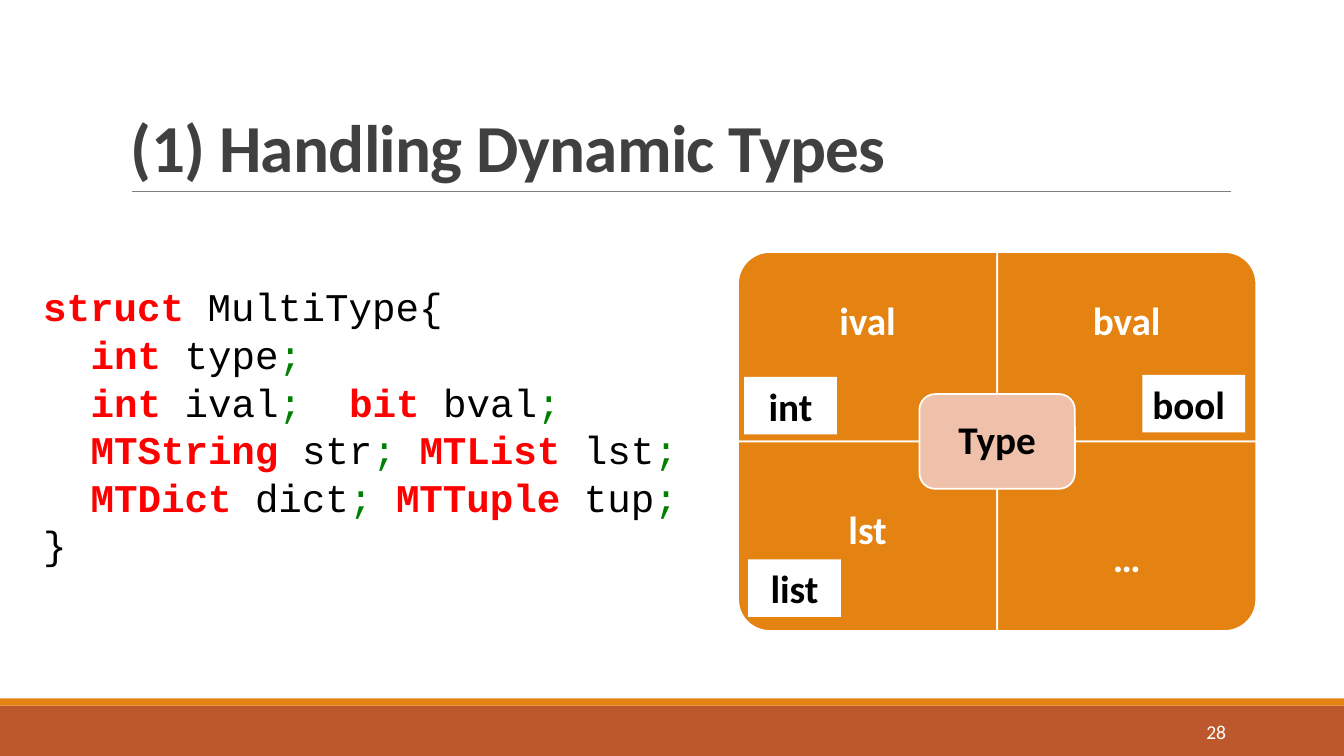
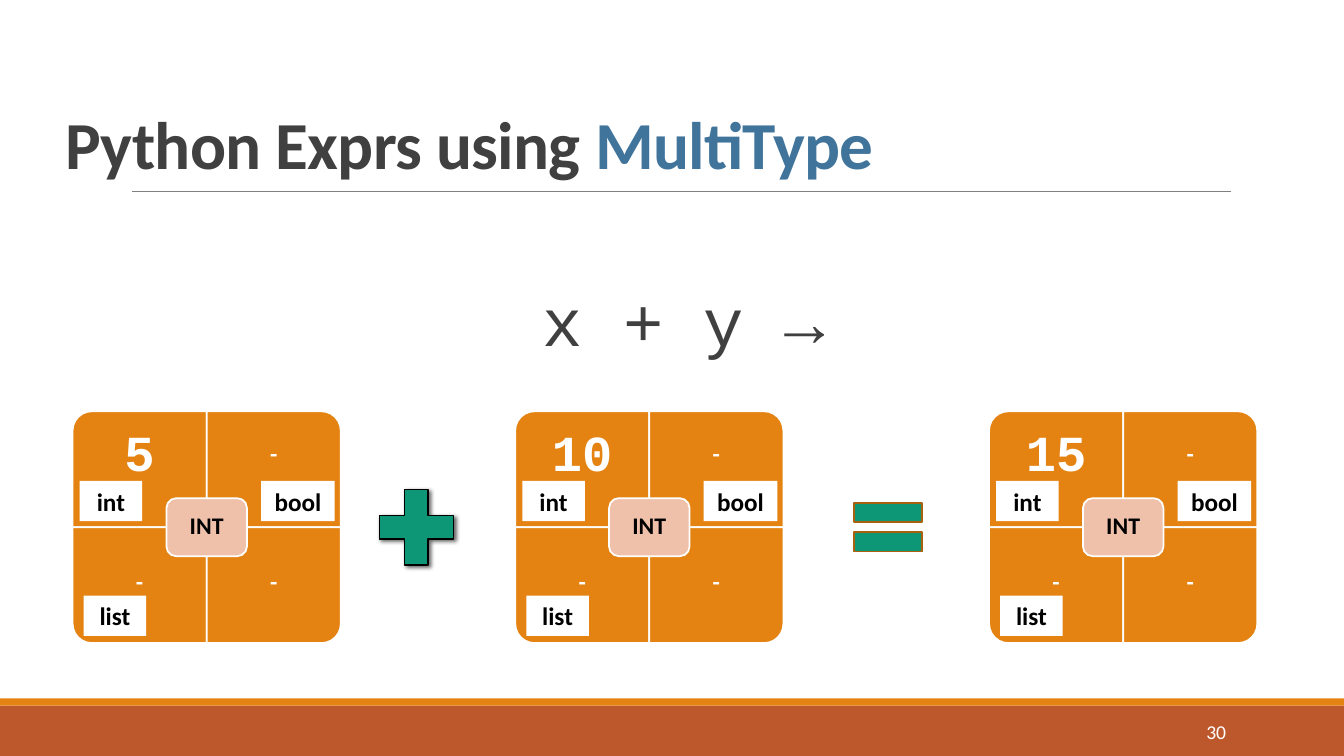
from lxml import etree
from pptx import Presentation
from pptx.dml.color import RGBColor
from pptx.enum.shapes import MSO_CONNECTOR, MSO_SHAPE
from pptx.enum.text import MSO_ANCHOR, PP_ALIGN
from pptx.oxml import parse_xml
from pptx.oxml.ns import nsdecls, qn
from pptx.util import Inches, Pt

RECT, ROUND = MSO_SHAPE.RECTANGLE, MSO_SHAPE.ROUNDED_RECTANGLE
CORNER = MSO_SHAPE.ROUND_1_RECTANGLE
PLUS, EQUAL = MSO_SHAPE.MATH_PLUS, MSO_SHAPE.MATH_EQUAL
LEFT, MID, RIGHT = PP_ALIGN.LEFT, PP_ALIGN.CENTER, PP_ALIGN.RIGHT
TOP, CENTER, BOTTOM = MSO_ANCHOR.TOP, MSO_ANCHOR.MIDDLE, MSO_ANCHOR.BOTTOM

RUST, ORANGE, PEACH, TEAL = "BD582C", "E48312", "EFC1AB", "0D9776"
WHITE, BLACK, GRAY, DARK, BLUE = "FFFFFF", "000000", "808080", "404040", "40749B"
RED, GREEN, BROWN = "FF0000", "008000", "A9610D"
SANS, MONO = "Calibri", "Courier New"


def draw(shapes, kind, x, y, w, h, fill, line=None, width=1.25):
    """Add a preset shape with a plain fill and an optional outline."""
    item = shapes.add_shape(kind, Inches(x), Inches(y), Inches(w), Inches(h))
    item.shadow.inherit = False
    item.fill.solid()
    item.fill.fore_color.rgb = RGBColor.from_string(fill)
    if line:
        item.line.color.rgb = RGBColor.from_string(line)
        item.line.width = Pt(width)
    else:
        item.line.fill.background()
    return item


def write(shapes, x, y, w, h, rows, size=28, font=SANS, color=BLACK, bold=False,
          align=MID, anchor=CENTER, pad=0.0, space=None, tight=0, item=None):
    """Write rows of (text, color, bold) runs in a new text box or in item."""
    item = item or shapes.add_textbox(Inches(x), Inches(y), Inches(w), Inches(h))
    frame = item.text_frame
    frame.word_wrap = True
    frame.vertical_anchor = anchor
    frame.margin_left = frame.margin_right = Inches(pad)
    frame.margin_top = frame.margin_bottom = Inches(pad / 2)
    if isinstance(rows, str):
        rows = [[(rows, color, bold)]]
    for i, row in enumerate(rows):
        para = frame.add_paragraph() if i else frame.paragraphs[0]
        para.alignment = align
        if space:
            para.line_spacing = space
        for text, tint, heavy in row:
            run = para.add_run()
            run.text = text
            run.font.size, run.font.name, run.font.bold = Pt(size), font, heavy
            run.font.color.rgb = RGBColor.from_string(tint)
            if tight:
                run.font._element.set("spc", str(tight))
    return item


deck = Presentation()
deck.slide_width, deck.slide_height = Inches(13.33), Inches(7.5)

# Shared frame: bands, title rule, title, page number
pages = [
    (1.2, 0.31, 11, [("(1) Handling Dynamic Types", DARK, True)], "28"),
    (0.55, 0.28, 12.39, [("Python Exprs using ", DARK, True),
                         ("MultiType", BLUE, True)], "30"),
]
slides = []
for x, y, w, title, num in pages:
    shapes = deck.slides.add_slide(deck.slide_layouts[6]).shapes
    slides.append(shapes)
    draw(shapes, RECT, 0, 7, 13.33, 0.5, RUST)
    draw(shapes, RECT, 0, 6.93, 13.33, 0.07, ORANGE)
    rule = shapes.add_connector(MSO_CONNECTOR.STRAIGHT, Inches(1.31), Inches(1.9),
                                Inches(12.21), Inches(1.9))
    rule.line.color.rgb = RGBColor.from_string(GRAY)
    rule.line.width = Pt(0.5)
    etree.SubElement(rule._element.spPr, qn("a:effectLst"))
    write(shapes, x, y, w, 1.59, [title], size=48, align=LEFT, anchor=BOTTOM,
          pad=0.1, space=0.85, tight=-50)
    write(shapes, 10.83, 7.06, 1.43, 0.4, num, size=14, color=WHITE,
          align=RIGHT, pad=0.1)
first, second = slides

# Struct listing
semi = (";", GREEN, False)
code = [
    [("struct ", RED, True), ("MultiType{", BLACK, False)],
    [("int ", RED, True), ("type", BLACK, False), semi],
    [("int", RED, True), (" ival", BLACK, False), (";  ", GREEN, False),
     ("bit ", RED, True), ("bval", BLACK, False), semi],
    [("MTString ", RED, True), ("str", BLACK, False), ("; ", GREEN, False),
     ("MTList ", RED, True), ("lst", BLACK, False), semi],
    [("MTDict ", RED, True), ("dict", BLACK, False), ("; ", GREEN, False),
     ("MTTuple ", RED, True), ("tup", BLACK, False), semi],
    [("}", BLACK, False)],
]
listing = write(first, 0.33, 2.75, 7.19, 2.95, code, font=MONO, align=LEFT,
                anchor=TOP, pad=0.1, space=Pt(34))
for para in listing.text_frame.paragraphs[1:-1]:
    para._p.get_or_add_pPr().set("marL", str(Inches(0.47)))

# Expression and its operators
write(second, 2.23, 2.81, 9.1, 0.9, "x + y →", size=48, font=MONO, color=DARK,
      anchor=TOP, pad=0.1, space=0.9)
plus = draw(second, PLUS, 3.63, 4.72, 1, 1.02, TEAL, BLACK, 1)
shade = parse_xml(
    f'<a:effectLst {nsdecls("a")}><a:outerShdw blurRad="{Pt(3)}" dist="{Pt(2)}" '
    'dir="2700000"><a:srgbClr val="000000"><a:alpha val="60000"/></a:srgbClr>'
    '</a:outerShdw></a:effectLst>')
props = plus._element.spPr
props.replace(props.find(qn("a:effectLst")), shade)
draw(second, EQUAL, 8.35, 4.82, 0.92, 0.82, TEAL, BROWN)

# Cards: four quarters, a hub and three tags
# Cells hold text, size, font and whether the text is lifted;
# tags hold text, offset from the card, width and alignment
names = [("ival", 28, SANS, False), ("bval", 28, SANS, False),
         ("lst", 28, SANS, True), ("…", 28, SANS, False)]
large = [("int", 0.06, 1.24, 0.92, MID), ("bool", 4.01, 1.22, 1.02, LEFT),
         ("list", 0.1, 3.05, 0.92, MID)]
small = [("int", 0.07, 0.69, 0.62, MID), ("bool", 1.87, 0.69, 0.73, MID),
         ("list", 0.11, 1.83, 0.62, MID)]
cards = [(first, 7.32, 2.5, 2.57, 1.88, names, "Type", 28, large, 28, 0.57)]
for x, value in ((0.72, "5"), (5.11, "10"), (9.81, "15")):
    cells = [(value, 36, MONO, False), ("-", 17, SANS, False),
             ("-", 17, SANS, True), ("-", 17, SANS, True)]
    cards.append((second, x, 4.08, 1.33, 1.15, cells, "INT", 17, small, 18, 0.4))

for page, x, y, w, h, cells, hub, size, tags, point, high in cards:
    card = page.add_group_shape().shapes
    for i, (text, big, font, lift) in enumerate(cells):
        row, col = divmod(i, 2)
        left, top = x + col * w, y + row * h
        turn = (270, 0, 180, 90)[i]
        wide, tall = (h, w) if turn % 180 else (w, h)
        part = draw(card, CORNER, left + (w - wide) / 2, top + (h - tall) / 2,
                    wide, tall, ORANGE, WHITE)
        part.rotation = turn
        shift = row * h / 4 - lift * big / 100
        write(card, left, top + shift, w, h * 0.75, text, size=big, font=font,
              color=WHITE, bold=True, space=0.9)
    knob = draw(card, ROUND, x + 0.7 * w, y + 0.75 * h, 0.6 * w, 0.5 * h, PEACH, WHITE)
    write(card, 0, 0, 0, 0, hub, size=size, bold=True, space=0.9, item=knob)
    for text, dx, dy, wide, align in tags:
        tag = draw(card, RECT, x + dx, y + dy, wide, high, WHITE)
        write(card, 0, 0, 0, 0, text, size=point, bold=True, align=align,
              pad=0.1, item=tag)

deck.save("out.pptx")
